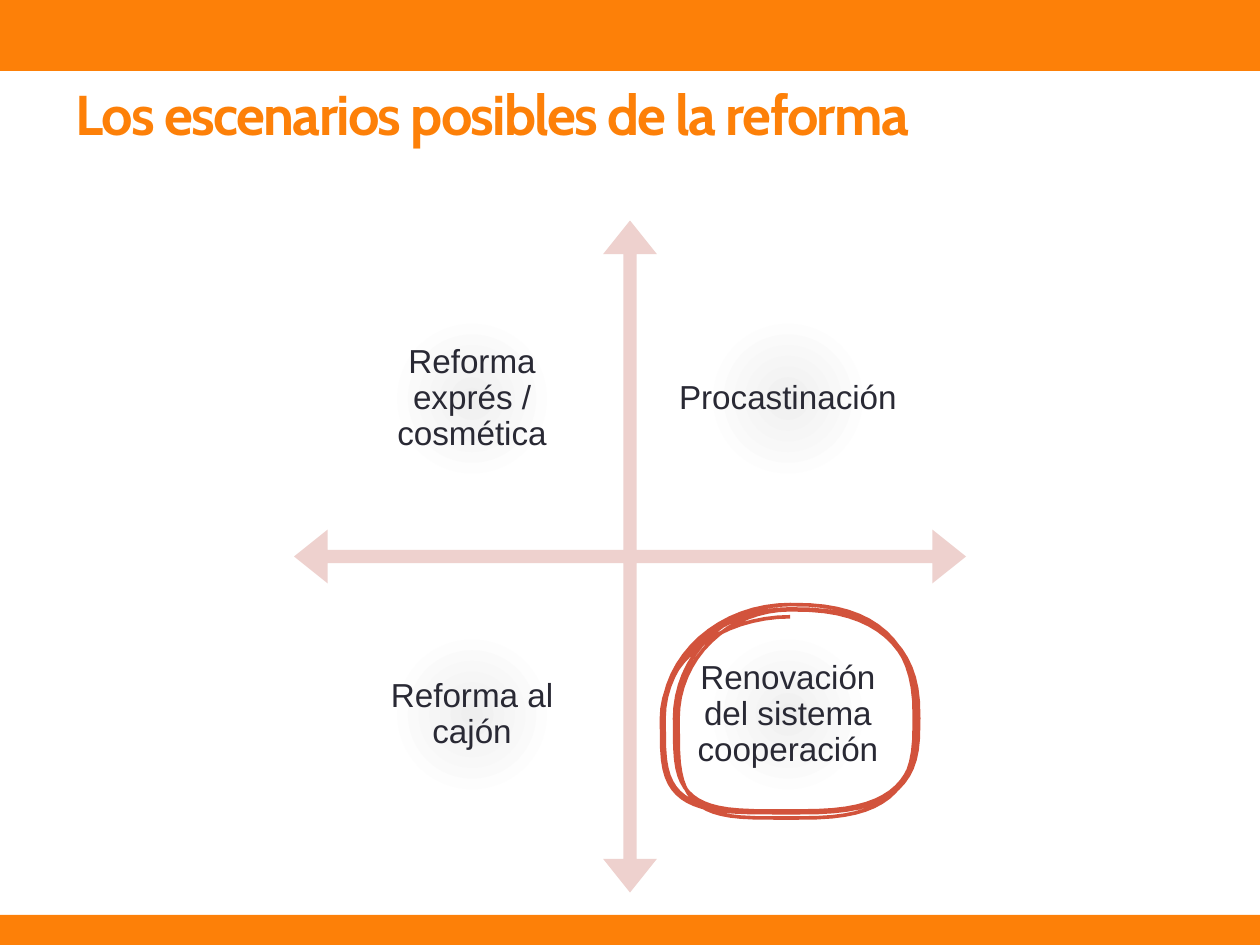
import copy
import math

import lxml.etree
import pptx
import pptx.dml.color
import pptx.enum.shapes
import pptx.enum.text
import pptx.oxml.ns
import pptx.util

Pt = pptx.util.Pt
RGBColor = pptx.dml.color.RGBColor
MSO_SHAPE = pptx.enum.shapes.MSO_SHAPE
MSO_ANCHOR = pptx.enum.text.MSO_ANCHOR
PP_ALIGN = pptx.enum.text.PP_ALIGN
qn = pptx.oxml.ns.qn

ORANGE = RGBColor(0xFD, 0x80, 0x08)
PINK = RGBColor(0xEE, 0xD1, 0xCE)
GREY = RGBColor(0xEF, 0xEF, 0xEF)
WHITE = RGBColor(0xFF, 0xFF, 0xFF)
INK = RGBColor(0x29, 0x29, 0x34)
RED = RGBColor(0xD2, 0x53, 0x3C)

TITLE = "Los escenarios posibles de la reforma"
SCENARIOS = [
    ["Reforma exprés / cosmética", "Procastinación"],
    ["Reforma al cajón", "Renovación del sistema cooperación"],
]
MATRIX_LEFT, MATRIX_TOP, MATRIX_SIZE = 168, 126, 384
TILE_SIZE = 0.4 * MATRIX_SIZE
TILE_OFFSETS = [0.065 * MATRIX_SIZE, 0.535 * MATRIX_SIZE]

SCRIBBLE_X, SCRIBBLE_Y = 451.5, 410.5
SCRIBBLE_RADII = [58, 73.5, 54, 73.5, 62.5, 72, 53, 72, 65, 66, 53, 72, 62, 64, 57, 71, 65, 73, 54]
SCRIBBLE_ROUNDNESS = [2, 4, 3, 2.5]
QUARTER_STEPS = 16


def add_text(tf, text, font="Arial", size=19, color=INK, bold=False, align=PP_ALIGN.CENTER,
             anchor=MSO_ANCHOR.MIDDLE, line_spacing=0.9, tracking=0):
    tf.word_wrap = True
    tf.auto_size = pptx.enum.text.MSO_AUTO_SIZE.NONE
    tf.vertical_anchor = anchor
    p = tf.paragraphs[0]
    p.alignment = align
    p.line_spacing = line_spacing
    r = p.add_run()
    r.text = text
    r.font.name = font
    r.font.size = Pt(size)
    r.font.bold = bold
    r.font.color.rgb = color
    if tracking:
        r.font._element.set("spc", str(tracking * 100))


def add_block(s, kind, left, top, width, height, color=None):
    sp = s.shapes.add_shape(kind, Pt(left), Pt(top), Pt(width), Pt(height))
    sp.shadow.inherit = False
    sp.line.fill.background()
    if color is not None:
        sp.fill.solid()
        sp.fill.fore_color.rgb = color
    return sp


def fill_radial(sp):
    sp.fill.gradient()
    for stop, color, position in zip(sp.fill.gradient_stops, (GREY, WHITE), (0, 0.45)):
        stop.color.rgb = color
        stop.position = position
    grad = sp._element.spPr.find(qn("a:gradFill"))
    stops = grad.find(qn("a:gsLst"))
    last = copy.deepcopy(stops[-1])
    last.set("pos", "100000")
    stops.append(last)
    grad.remove(grad.find(qn("a:lin")))
    circle = lxml.etree.SubElement(grad, qn("a:path"), path="circle")
    lxml.etree.SubElement(circle, qn("a:fillToRect"), {side: "100000" for side in "ltrb"})


def add_title(s):
    sp = s.shapes.title
    sp.left, sp.top, sp.width, sp.height = Pt(36), Pt(42), Pt(648), Pt(78)
    add_text(sp.text_frame, TITLE, font="Cabin", size=32, color=ORANGE, bold=True,
             align=PP_ALIGN.LEFT, anchor=MSO_ANCHOR.TOP, line_spacing=1.0, tracking=-1)


def add_axes(s):
    sp = add_block(s, MSO_SHAPE.QUAD_ARROW, MATRIX_LEFT, MATRIX_TOP, MATRIX_SIZE, MATRIX_SIZE, PINK)
    for i, value in enumerate((0.02, 0.04, 0.05)):
        sp.adjustments[i] = value


def add_scenario(s, text, left, top):
    sp = add_block(s, MSO_SHAPE.ROUNDED_RECTANGLE, left, top, TILE_SIZE, TILE_SIZE)
    fill_radial(sp)
    tf = sp.text_frame
    tf.margin_left = tf.margin_right = tf.margin_top = tf.margin_bottom = Pt(5.7)
    add_text(tf, text)


def scribble_point(step):
    quarter = step // QUARTER_STEPS
    radii = SCRIBBLE_RADII[quarter:quarter + 2]
    ry, rx = radii if quarter % 2 == 0 else reversed(radii)
    power = 2 / SCRIBBLE_ROUNDNESS[quarter % 4]
    angle = math.pi / 2 * (1 + step / QUARTER_STEPS)
    dx, dy = math.cos(angle), -math.sin(angle)
    x = SCRIBBLE_X + rx * math.copysign(abs(dx) ** power, dx)
    y = SCRIBBLE_Y + ry * math.copysign(abs(dy) ** power, dy)
    return Pt(x), Pt(y)


def add_scribble(s):
    steps = int((len(SCRIBBLE_RADII) - 1.6) * QUARTER_STEPS)
    points = [scribble_point(step) for step in range(steps)]
    builder = s.shapes.build_freeform(*points[0])
    builder.add_line_segments(points[1:], close=False)
    sp = builder.convert_to_shape()
    sp.shadow.inherit = False
    sp.fill.background()
    sp.line.color.rgb = RED
    sp.line.width = Pt(2.08)


def main():
    prs = pptx.Presentation()
    prs.slide_width, prs.slide_height = Pt(720), Pt(540)
    s = prs.slides.add_slide(prs.slide_layouts[5])
    add_block(s, MSO_SHAPE.RECTANGLE, 0, 0, 720, 40.5, ORANGE)
    add_block(s, MSO_SHAPE.RECTANGLE, 0, 522.75, 720, 17.25, ORANGE)
    add_title(s)
    add_axes(s)
    for row, dy in zip(SCENARIOS, TILE_OFFSETS):
        for text, dx in zip(row, TILE_OFFSETS):
            add_scenario(s, text, MATRIX_LEFT + dx, MATRIX_TOP + dy)
    add_scribble(s)
    prs.save("out.pptx")


if __name__ == "__main__":
    main()
